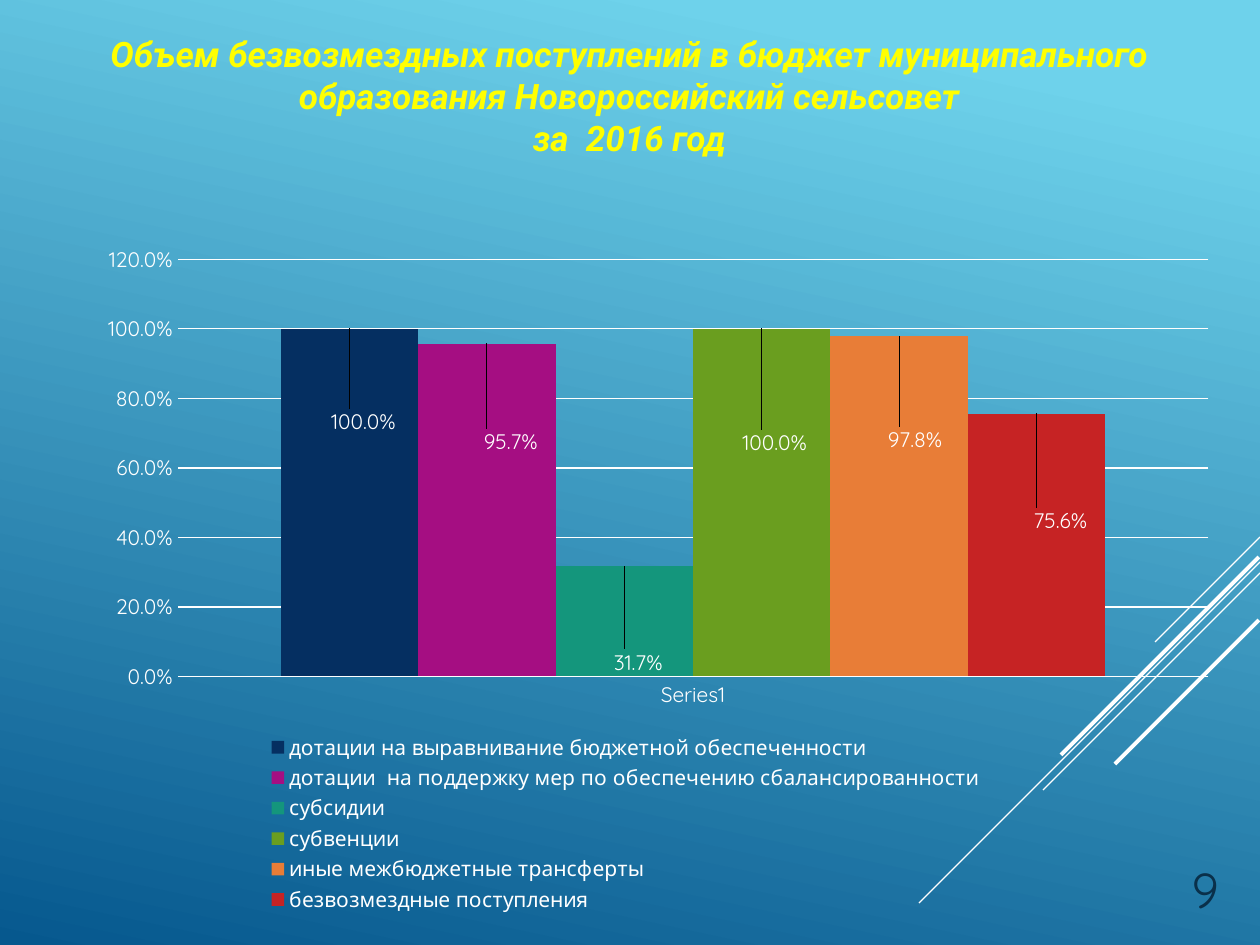
from lxml import etree
from pptx import Presentation
from pptx.chart.data import CategoryChartData
from pptx.dml.color import RGBColor
from pptx.enum.chart import XL_CHART_TYPE as ChartType
from pptx.enum.chart import XL_LABEL_POSITION as LabelPosition
from pptx.enum.chart import XL_LEGEND_POSITION as LegendPosition
from pptx.enum.chart import XL_TICK_MARK as TickMark
from pptx.enum.shapes import MSO_CONNECTOR as Connector
from pptx.enum.text import MSO_ANCHOR as Anchor
from pptx.enum.text import PP_ALIGN as Align
from pptx.oxml.ns import qn
from pptx.util import Pt

PX = 914400 / 126
WHITE = RGBColor(0xFF, 0xFF, 0xFF)
YELLOW = RGBColor(0xFF, 0xFF, 0x00)
INK = RGBColor(0x0A, 0x30, 0x4A)
SKY = RGBColor(0x6E, 0xD2, 0xEB)
DEEP = RGBColor(0x06, 0x58, 0x8E)
BODY_FONT = "Quicksand"
TITLE_FONT = "Roboto"

# name, value, colour, label shift in px from the top of the column
INCOME = [
    ("дотации на выравнивание бюджетной обеспеченности", 1,
     RGBColor(0x05, 0x2F, 0x61), (14, 111)),
    ("дотации  на поддержку мер по обеспечению сбалансированности ", 0.957,
     RGBColor(0xA5, 0x0E, 0x82), (24, 116)),
    ("субсидии ", 0.317, RGBColor(0x14, 0x96, 0x7C), (14, 114)),
    ("субвенции ", 1, RGBColor(0x6A, 0x9E, 0x1F), (13, 132)),
    ("иные межбюджетные трансферты", 0.978,
     RGBColor(0xE8, 0x7D, 0x37), (16, 121)),
    ("безвозмездные поступления ", 0.756,
     RGBColor(0xC6, 0x23, 0x24), (24, 125)),
]


def emu(*lengths):
    return [round(length * PX) for length in lengths]


def style(font, size, color, name=BODY_FONT):
    font.size = Pt(size)
    font.name = name
    font.color.rgb = color


def paint_background(slide):
    fill = slide.background.fill
    fill.gradient()
    fill.gradient_angle = 258
    for stop, color, position in zip(fill.gradient_stops, (SKY, DEEP), (0.1, 1)):
        stop.color.rgb = color
        stop.position = position


def add_stripes(slide, box):
    """Diagonal lines: each rises at 45 degrees to the right."""
    left, top, width, height = box
    group = slide.shapes.add_group_shape()
    stripes = [(341, 0, 105, 0.75), (341, 25, 341, 0.75), (341, 36, 217, 0.75),
               (340, 20, 198, 2.25), (340, 83, 144, 2.25)]
    for x, y, run, weight in stripes:
        ends = emu(left + x, top + y, left + x - run, top + y + run)
        line = group.shapes.add_connector(Connector.STRAIGHT, *ends)
        line.line.color.rgb = WHITE
        line.line.width = Pt(weight)
        etree.SubElement(line.element.spPr, qn("a:effectLst"))


def add_text(slide, box, lines, align, size, color, name, anchor, slanted=False):
    frame = slide.shapes.add_textbox(*emu(*box)).text_frame
    frame.word_wrap = True
    frame.vertical_anchor = anchor
    for index, line in enumerate(lines):
        para = frame.add_paragraph() if index else frame.paragraphs[0]
        para.alignment = align
        span = para.add_run()
        span.text = line
        style(span.font, size, color, name)
        span.font.bold = span.font.italic = slanted


def set_layout(parent, index, **values):
    """Give a chart part a manual layout, as its child number index."""
    for old in parent.findall(qn("c:layout")):
        parent.remove(old)
    layout = etree.Element(qn("c:layout"))
    manual = etree.SubElement(layout, qn("c:manualLayout"))
    for tag, value in values.items():
        etree.SubElement(manual, qn(f"c:{tag}")).set("val", str(value))
    parent.insert(index, layout)


def style_axes(chart):
    for axis in (chart.category_axis, chart.value_axis):
        axis.major_tick_mark = axis.minor_tick_mark = TickMark.NONE
        axis.format.line.fill.background()
        style(axis.tick_labels.font, 12, WHITE)
    axis = chart.value_axis
    axis.minimum_scale, axis.maximum_scale, axis.major_unit = 0, 1.2, 0.2
    axis.tick_labels.number_format = "0.0%"
    axis.tick_labels.number_format_is_linked = False
    axis.major_gridlines.format.line.color.rgb = WHITE
    axis.major_gridlines.format.line.width = Pt(0.75)


def style_series(series, color):
    series.format.fill.solid()
    series.format.fill.fore_color.rgb = color
    labels = series.data_labels
    labels.show_value = True
    labels.number_format = "0.0%"
    labels.number_format_is_linked = False
    style(labels.font, 12, WHITE)
    label = series.points[0].data_label
    label.position = LabelPosition.OUTSIDE_END
    style(label.font, 12, WHITE)


def add_income_chart(slide, box):
    width, height = box[2:]
    data = CategoryChartData(number_format="0.0%")
    data.categories = ["Series1"]
    for name, value, _, _ in INCOME:
        data.add_series(name, [value])
    chart = slide.shapes.add_chart(
        ChartType.COLUMN_CLUSTERED, *emu(*box), data).chart
    chart.has_title = False
    style(chart.font, 10, WHITE)
    style_axes(chart)

    plot = chart.plots[0]
    plot.gap_width, plot.overlap = 150, 0
    plot.vary_by_categories = False
    for series, (_, _, color, _) in zip(plot.series, INCOME):
        style_series(series, color)
    for label, (_, _, _, (dx, dy)) in zip(chart.element.iter(qn("c:dLbl")), INCOME):
        set_layout(label, 1, x=dx / width, y=dy / height)

    chart.has_legend = True
    chart.legend.position = LegendPosition.BOTTOM
    chart.legend.include_in_layout = False
    style(chart.legend.font, 12, WHITE)
    set_layout(next(chart.element.iter(qn("c:legend"))), 1,
               xMode="edge", yMode="edge", x=218 / width, y=539 / height,
               w=724 / width, h=187 / height)
    set_layout(next(chart.element.iter(qn("c:plotArea"))), 0,
               layoutTarget="inner", xMode="edge", yMode="edge",
               x=0.111, y=0.094, w=0.889, h=0.573)


def main():
    deck = Presentation()
    deck.slide_width, deck.slide_height = emu(1260, 945)
    slide = deck.slides.add_slide(deck.slide_layouts[6])
    paint_background(slide)
    add_stripes(slide, (919, 537, 341, 366))
    add_text(slide, (963, 890, 268, 35), ["9"], Align.RIGHT, 28, INK,
             BODY_FONT, Anchor.BOTTOM)
    title = ["Объем безвозмездных поступлений в бюджет муниципального "
             "образования Новороссийский сельсовет", "за  2016 год"]
    add_text(slide, (74, 26, 1111, 183), title, Align.CENTER, 20, YELLOW,
             TITLE_FONT, Anchor.TOP, slanted=True)
    add_income_chart(slide, (49, 191, 1160, 728))
    deck.save("out.pptx")


if __name__ == "__main__":
    main()
